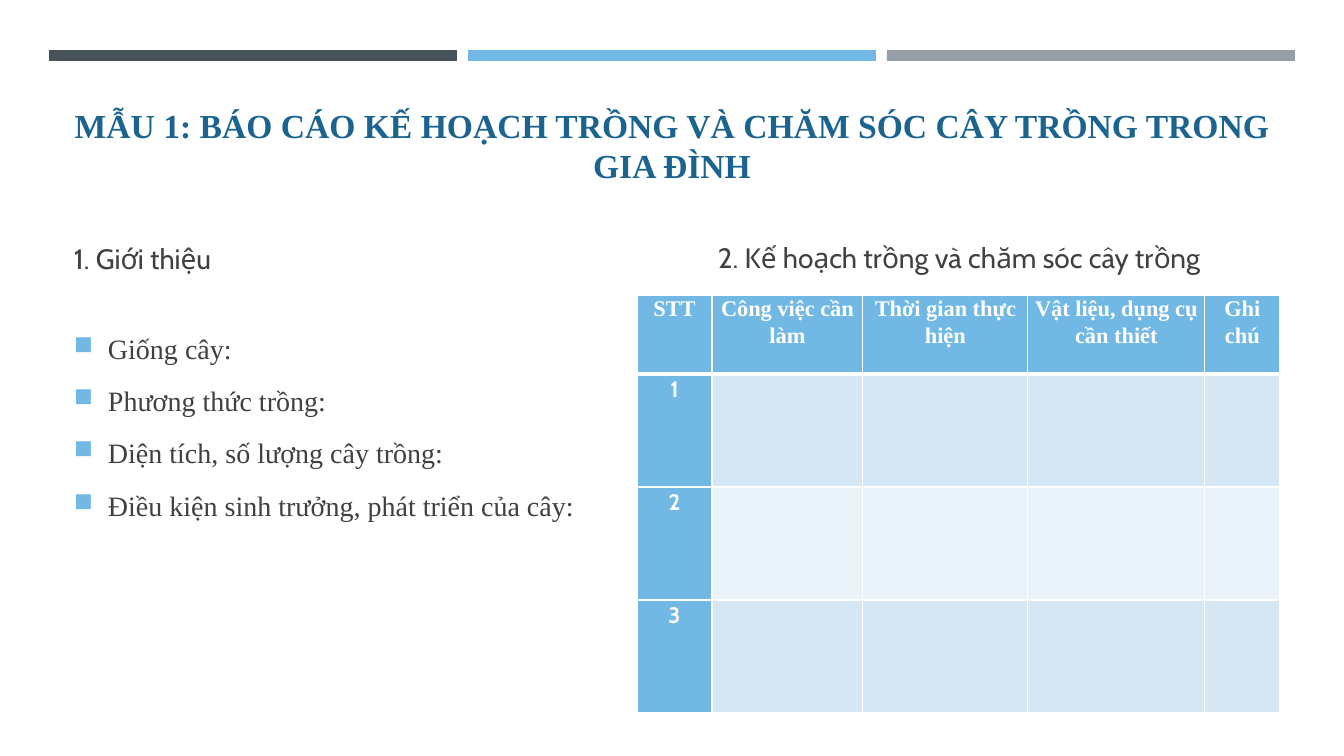
from lxml import etree
from pptx import Presentation
from pptx.dml.color import RGBColor
from pptx.enum.shapes import MSO_SHAPE
from pptx.enum.text import MSO_ANCHOR, PP_ALIGN
from pptx.oxml.ns import qn
from pptx.util import Emu, Pt

RECTANGLE = MSO_SHAPE.RECTANGLE
TOP, MIDDLE, BOTTOM = MSO_ANCHOR.TOP, MSO_ANCHOR.MIDDLE, MSO_ANCHOR.BOTTOM
LEFT, CENTER = PP_ALIGN.LEFT, PP_ALIGN.CENTER

SERIF, SANS = "Times New Roman", "Cabin"
COLORS = {
    "slate": "465359", "sky": "71B9E4", "gray": "969FA7",
    "title": "1B648F", "text": "404040", "white": "FFFFFF",
    "band_dark": "D5E6F5", "band_light": "EBF3FA",
}

TITLE = "MẪU 1: BÁO CÁO KẾ HOẠCH TRỒNG VÀ CHĂM SÓC CÂY TRỒNG TRONG GIA ĐÌNH"
DETAILS = [
    "Giống cây:",
    "Phương thức trồng:",
    "Diện tích, số lượng cây trồng:",
    "Điều kiện sinh trưởng, phát triển của cây:",
]
HEADERS = ["STT", "Công việc cần làm", "Thời gian thực hiện",
           "Vật liệu, dụng cụ cần thiết", "Ghi chú"]
COLUMN_WIDTHS = [75, 151, 165, 177, 75]
ROW_HEIGHTS = [79, 113, 113, 113]


def px(length):
    """Turn px, at 100.8 to the inch, into EMU."""
    return Emu(round(length * 914400 / 100.8))


def color(name):
    return RGBColor.from_string(COLORS[name])


def style(para, font, size, color_name, bold=False, align=LEFT):
    para.alignment = align
    for run in para.runs:
        run.font.name = font
        run.font.size = Pt(size)
        run.font.bold = bold
        run.font.color.rgb = color(color_name)


def add_text_box(page, box, anchor):
    frame = page.shapes.add_textbox(*map(px, box)).text_frame
    frame.word_wrap = True
    frame.vertical_anchor = anchor
    return frame


def add_top_bars(page, box):
    left, top, width, height = box
    gap = 11
    names = ["slate", "sky", "gray"]
    bar_width = (width - gap * (len(names) - 1)) // len(names)
    for index, name in enumerate(names):
        bar = page.shapes.add_shape(
            RECTANGLE, px(left + index * (bar_width + gap)), px(top),
            px(bar_width), px(height))
        bar.shadow.inherit = False
        bar.fill.solid()
        bar.fill.fore_color.rgb = color(name)
        bar.line.fill.background()


def add_title(page, box):
    frame = add_text_box(page, box, BOTTOM)
    frame.text = TITLE
    style(frame.paragraphs[0], SERIF, 24, "title", True, CENTER)


def add_heading(page, box, text):
    frame = add_text_box(page, box, MIDDLE)
    frame.text = text
    style(frame.paragraphs[0], SANS, 20, "text")


def add_bullet(para):
    properties = para._p.get_or_add_pPr()
    properties.set("marL", str(px(34)))
    properties.set("indent", str(-px(34)))
    bullet_color = etree.SubElement(properties, qn("a:buClr"))
    etree.SubElement(bullet_color, qn("a:srgbClr"), val=COLORS["sky"])
    etree.SubElement(properties, qn("a:buSzPct"), val="92000")
    etree.SubElement(properties, qn("a:buChar"), char="■")


def add_details(page, box):
    frame = add_text_box(page, box, TOP)
    for index, text in enumerate(DETAILS):
        para = frame.add_paragraph() if index else frame.paragraphs[0]
        para.text = text
        add_bullet(para)
        style(para, SERIF, 20, "text")
        para.line_spacing = 1.1
        para.space_after = Pt(6)
        if index:
            para.space_before = Pt(5)


def set_borders(cell, widths):
    """Draw white borders; widths are points for left, right, top, bottom."""
    properties = cell._tc.get_or_add_tcPr()
    for index, (side, width) in enumerate(zip("LRTB", widths)):
        line = etree.Element(qn(f"a:ln{side}"), w=str(Pt(width)))
        fill = etree.SubElement(line, qn("a:solidFill"))
        etree.SubElement(fill, qn("a:srgbClr"), val=COLORS["white"])
        properties.insert(index, line)


def fill_cell(cell, row, column):
    is_label = row == 0 or column == 0
    band = "band_dark" if row % 2 else "band_light"
    cell.fill.solid()
    cell.fill.fore_color.rgb = color("sky" if is_label else band)
    set_borders(cell, (1, 1, 3 if row == 1 else 1, 3 if row == 0 else 1))
    if is_label:
        cell.margin_left = cell.margin_right = px(7)
        cell.margin_top = cell.margin_bottom = 0
        cell.text = str(row) if row else HEADERS[column]
        para = cell.text_frame.paragraphs[0]
        style(para, SANS if row else SERIF, 16, "white", True, CENTER)
        para.line_spacing = 1.07
        para.space_after = Pt(6)


def add_plan_table(page, left, top):
    table = page.shapes.add_table(
        len(ROW_HEIGHTS), len(COLUMN_WIDTHS), px(left), px(top),
        px(sum(COLUMN_WIDTHS)), px(sum(ROW_HEIGHTS))).table
    for column, width in zip(table.columns, COLUMN_WIDTHS):
        column.width = px(width)
    for row, height in zip(table.rows, ROW_HEIGHTS):
        row.height = px(height)
    for row in range(len(ROW_HEIGHTS)):
        for column in range(len(COLUMN_WIDTHS)):
            fill_cell(table.cell(row, column), row, column)


def main():
    deck = Presentation()
    deck.slide_width, deck.slide_height = px(1344), px(756)
    page = deck.slides.add_slide(deck.slide_layouts[6])
    add_top_bars(page, (49, 50, 1246, 11))
    add_title(page, (64, 81, 1216, 109))
    add_heading(page, (64, 237, 573, 42), "1. Giới thiệu")
    add_details(page, (64, 323, 573, 324))
    add_heading(page, (708, 236, 573, 42),
                "2. Kế hoạch trồng và chăm sóc cây trồng")
    add_plan_table(page, 637, 295)
    deck.save("out.pptx")


if __name__ == "__main__":
    main()
